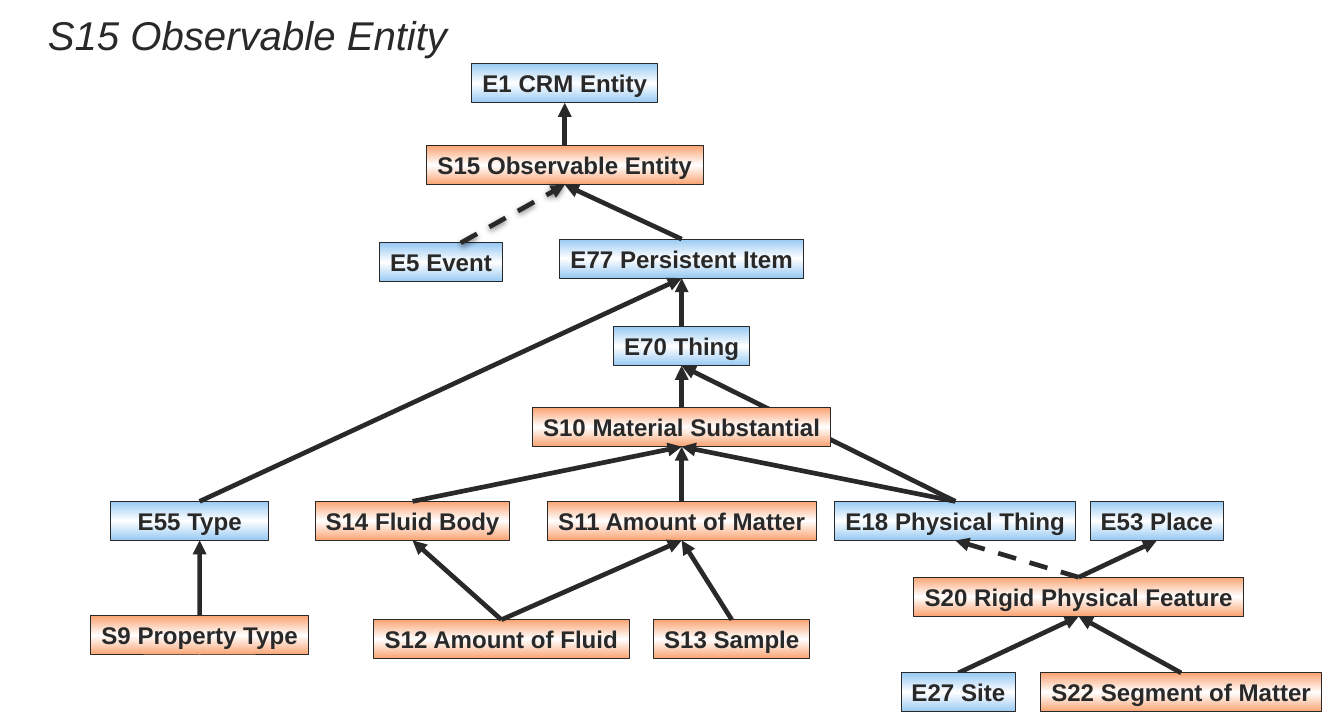
from copy import deepcopy
from dataclasses import dataclass
from typing import Any, Optional

from lxml import etree
from pptx import Presentation
from pptx import util as u
from pptx.dml import color
from pptx.enum import dml, shapes, text
from pptx.oxml import ns

INK, WHITE = "292929", "FFFFFF"
BLUE, ORANGE = "97C9F3", "FAA372"
BOX_HEIGHT = 1.03
TOP_SITE, BOTTOM_SITE = 0, 2


@dataclass
class EntityClass:
    label: str
    center: float
    top: float
    width: float
    anchor: Optional[float] = None  # where arrows meet the box, if off centre

    @property
    def code(self) -> str:
        return self.label.split()[0]

    @property
    def tint(self) -> str:
        return BLUE if self.label.startswith("E") else ORANGE

    @property
    def arrow_x(self) -> float:
        return self.center if self.anchor is None else self.anchor


@dataclass
class IsA:
    child: str
    parent: str
    dashed: bool = False
    shaded: bool = False
    behind: bool = False


# Class boxes: label, centre, top, width in cm
CLASSES = [
    EntityClass("E1 CRM Entity", 14.88, 1.68, 4.9),
    EntityClass("S15 Observable Entity", 14.88, 3.84, 7.29),
    EntityClass("E5 Event", 11.62, 6.4, 3.23, anchor=12.14),
    EntityClass("E77 Persistent Item", 17.96, 6.3, 6.43),
    EntityClass("E70 Thing", 17.96, 8.61, 3.58),
    EntityClass("S10 Material Substantial", 17.96, 10.74, 7.87),
    EntityClass("E55 Type", 5, 13.21, 4.17, anchor=5.26),
    EntityClass("S14 Fluid Body", 10.87, 13.21, 5.13),
    EntityClass("S11 Amount of Matter", 17.96, 13.21, 7.09),
    EntityClass("E18 Physical Thing", 25.17, 13.21, 6.35),
    EntityClass("E53 Place", 30.48, 13.21, 3.51),
    EntityClass("S20 Rigid Physical Feature", 28.42, 15.21, 8.71),
    EntityClass("S9 Property Type", 5.26, 16.23, 5.74),
    EntityClass("S12 Amount of Fluid", 13.21, 16.33, 6.73),
    EntityClass("S13 Sample", 19.28, 16.33, 4.11),
    EntityClass("E27 Site", 25.25, 17.73, 3),
    EntityClass("S22 Segment of Matter", 31.12, 17.73, 7.42),
]

# Subclass arrows, child to parent
HIERARCHY = [
    IsA("S15", "E1"),
    IsA("E5", "S15", dashed=True, shaded=True),
    IsA("E77", "S15"),
    IsA("E70", "E77"),
    IsA("E55", "E77"),
    IsA("S10", "E70"),
    IsA("E18", "E70", behind=True),
    IsA("S14", "S10"),
    IsA("S11", "S10"),
    IsA("E18", "S10"),
    IsA("S9", "E55"),
    IsA("S12", "S14"),
    IsA("S12", "S11"),
    IsA("S13", "S11"),
    IsA("S20", "E18", dashed=True),
    IsA("S20", "E53"),
    IsA("E27", "S20", behind=True),
    IsA("S22", "S20"),
]

LABEL_FONT = {"name": "Arial", "size": u.Pt(18), "bold": True}
TITLE_FONT = {"name": "Arial", "size": u.Pt(30), "italic": True}
INSETS = {"margin_left": u.Cm(0.25), "margin_right": u.Cm(0.25),
          "margin_top": u.Cm(0.13), "margin_bottom": u.Cm(0.13)}
LABEL_FRAME = {**INSETS, "word_wrap": False, "auto_size": text.MSO_AUTO_SIZE.NONE,
               "vertical_anchor": text.MSO_ANCHOR.TOP}
TITLE_FRAME = {**INSETS, "word_wrap": True, "vertical_anchor": text.MSO_ANCHOR.BOTTOM}


def rgb(value: str) -> color.RGBColor:
    return color.RGBColor.from_string(value)


def apply(target: Any, values: dict) -> None:
    for name, value in values.items():
        setattr(target, name, value)


def write(frame: Any, words: str, layout: dict, font: dict, align: Any) -> None:
    apply(frame, layout)
    paragraph = frame.paragraphs[0]
    paragraph.alignment = align
    run = paragraph.add_run()
    run.text = words
    apply(run.font, font)
    run.font.color.rgb = rgb(INK)


def draw_class(slide: Any, entity: EntityClass) -> Any:
    box = slide.shapes.add_shape(
        shapes.MSO_SHAPE.RECTANGLE, u.Cm(entity.center - entity.width / 2),
        u.Cm(entity.top), u.Cm(entity.width), u.Cm(BOX_HEIGHT))
    box.shadow.inherit = False
    box.line.color.rgb = rgb(INK)
    box.line.width = u.Pt(0.75)

    # Tint at both edges, white in the middle
    box.fill.gradient()
    box.fill.gradient_angle = 270
    stops = box._element.spPr.find(".//" + ns.qn("a:gsLst"))
    stops.insert(1, deepcopy(stops[0]))
    sheen = ((0, entity.tint), (0.5, WHITE), (1, entity.tint))
    for stop, (position, tint) in zip(box.fill.gradient_stops, sheen):
        stop.position = position
        stop.color.rgb = rgb(tint)

    write(box.text_frame, entity.label, LABEL_FRAME, LABEL_FONT, text.PP_ALIGN.CENTER)
    return box


def draw_arrow(slide: Any, link: IsA, classes: dict, boxes: dict) -> None:
    child, parent = classes[link.child], classes[link.parent]
    arrow = slide.shapes.add_connector(
        shapes.MSO_CONNECTOR.STRAIGHT, u.Cm(child.arrow_x), u.Cm(child.top),
        u.Cm(parent.arrow_x), u.Cm(parent.top + BOX_HEIGHT))
    if child.anchor is None:
        arrow.begin_connect(boxes[link.child], TOP_SITE)
    if parent.anchor is None:
        arrow.end_connect(boxes[link.parent], BOTTOM_SITE)

    arrow.line.color.rgb = rgb(INK)
    arrow.line.width = u.Pt(3.5)
    if link.dashed:
        arrow.line.dash_style = dml.MSO_LINE.DASH
    etree.SubElement(arrow.line._get_or_add_ln(), ns.qn("a:tailEnd"), type="triangle")

    effects = etree.SubElement(arrow._element.spPr, ns.qn("a:effectLst"))
    if link.shaded:
        shade = etree.SubElement(effects, ns.qn("a:outerShdw"), blurRad=str(u.Pt(4.5)),
                                 dist=str(u.Pt(1.5)), dir="5400000")
        black = etree.SubElement(shade, ns.qn("a:srgbClr"), val="000000")
        etree.SubElement(black, ns.qn("a:alpha"), val="50000")
    if link.behind:
        slide.shapes._spTree.insert(2, arrow._element)


def main() -> None:
    deck = Presentation()
    deck.slide_width, deck.slide_height = u.Cm(35.41), u.Cm(19.05)
    slide = deck.slides.add_slide(deck.slide_layouts[6])

    # Title
    title = slide.shapes.add_textbox(u.Cm(-1.27), u.Cm(-0.64), u.Cm(13.31), u.Cm(2.31))
    write(title.text_frame, "S15 Observable Entity", TITLE_FRAME, TITLE_FONT,
          text.PP_ALIGN.RIGHT)

    # Class hierarchy
    classes = {entity.code: entity for entity in CLASSES}
    boxes = {code: draw_class(slide, entity) for code, entity in classes.items()}
    for link in HIERARCHY:
        draw_arrow(slide, link, classes, boxes)

    deck.save("out.pptx")


if __name__ == "__main__":
    main()
